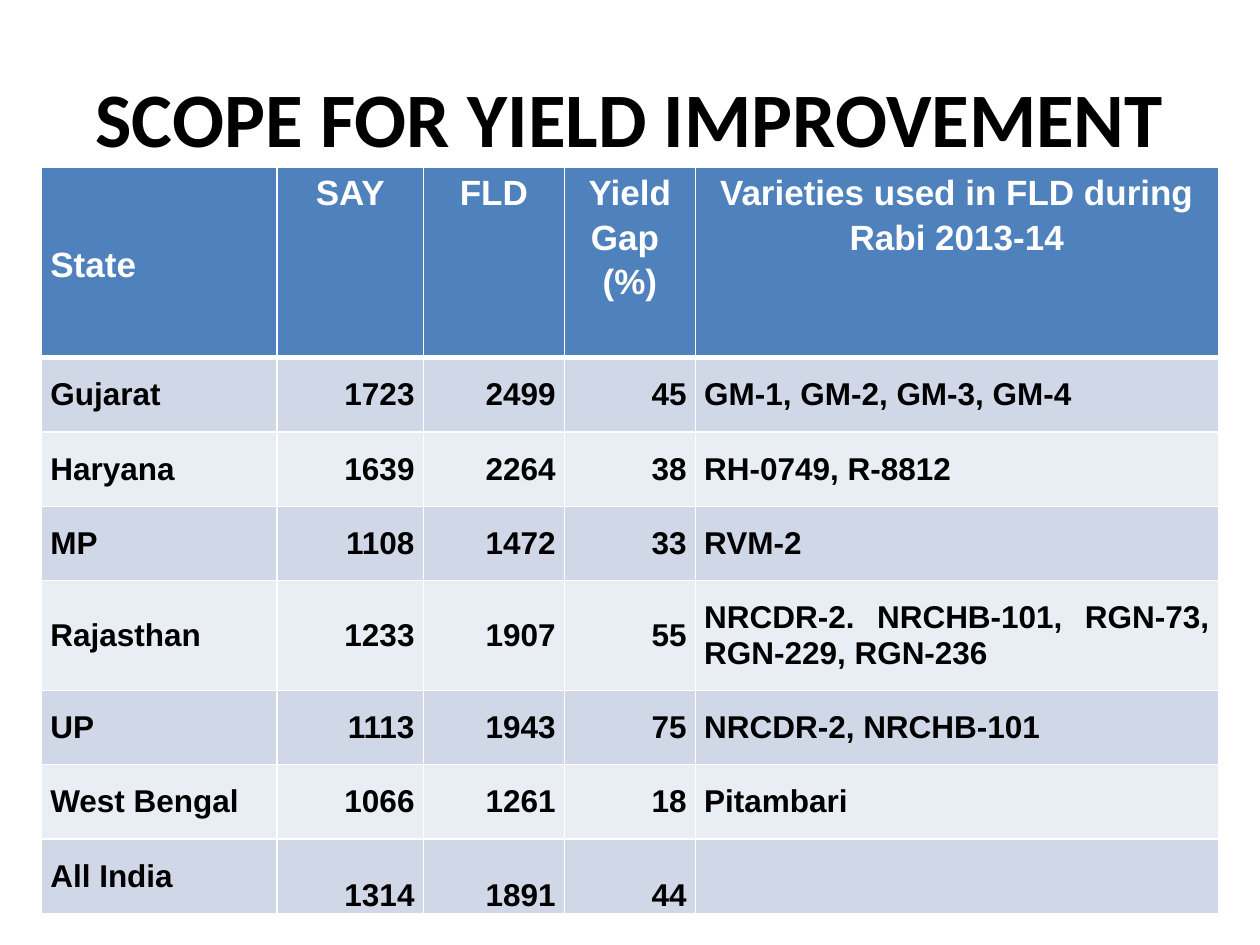
import pptx
import pptx.dml.color
import pptx.enum.text
import pptx.oxml.ns
import pptx.util
from lxml import etree

RGB = pptx.dml.color.RGBColor
WHITE = RGB(0xFF, 0xFF, 0xFF)
BLACK = RGB(0x00, 0x00, 0x00)
BLUE = RGB(0x4F, 0x81, 0xBD)
DARK = RGB(0xD0, 0xD8, 0xE8)
LIGHT = RGB(0xE9, 0xED, 0xF4)

Inches = pptx.util.Inches
Pt = pptx.util.Pt
qn = pptx.oxml.ns.qn
ALIGN = pptx.enum.text.PP_ALIGN
ANCHOR = pptx.enum.text.MSO_ANCHOR

COLS = [1.87, 1.16, 1.12, 1.04, 4.15]
TALL, ROW, HEAD = 0.87, 0.59, 1.51
SIDES = [ALIGN.LEFT, ALIGN.RIGHT, ALIGN.RIGHT, ALIGN.RIGHT, ALIGN.JUSTIFY]
DATA = [
    ["State", "SAY", "FLD", "Yield Gap \n(%)",
     "Varieties used in FLD during Rabi 2013-14"],
    ["Gujarat", "1723", "2499", "45", "GM-1, GM-2, GM-3, GM-4"],
    ["Haryana", "1639", "2264", "38", "RH-0749, R-8812"],
    ["MP", "1108", "1472", "33", "RVM-2"],
    ["Rajasthan", "1233", "1907", "55",
     "NRCDR-2. NRCHB-101, RGN-73, RGN-229, RGN-236"],
    ["UP", "1113", "1943", "75", "NRCDR-2, NRCHB-101"],
    ["West Bengal", "1066", "1261", "18", "Pitambari"],
    ["All India", "1314", "1891", "44", ""],
]
LAST = len(DATA) - 1


def write(para, text, font, size, color):
    run = para.add_run()
    run.text = text
    run.font.name = font
    run.font.size = Pt(size)
    run.font.bold = True
    run.font.color.rgb = color


def border(cell, side, width):
    props = cell._tc.get_or_add_tcPr()
    line = etree.SubElement(props, qn("a:ln" + side), w=str(Pt(width)))
    fill = etree.SubElement(line, qn("a:solidFill"))
    etree.SubElement(fill, qn("a:srgbClr"), val=str(WHITE))


deck = pptx.Presentation()
deck.slide_width, deck.slide_height = Inches(10), Inches(7.5)
slide = deck.slides.add_slide(deck.slide_layouts[6])

# Title
box = slide.shapes.add_textbox(Inches(0.5), Inches(0.3), Inches(9), Inches(1.25))
frame = box.text_frame
frame.word_wrap = True
frame.vertical_anchor = ANCHOR.MIDDLE
frame.paragraphs[0].alignment = ALIGN.CENTER
write(frame.paragraphs[0], "SCOPE FOR YIELD IMPROVEMENT", "Calibri", 44, BLACK)

# Table grid
rows = [HEAD] + [TALL if line[0] == "Rajasthan" else ROW for line in DATA[1:]]
table = slide.shapes.add_table(
    len(rows), len(COLS), Inches(0.33), Inches(1.33),
    Inches(sum(COLS)), Inches(sum(rows))).table
for col, width in zip(table.columns, COLS):
    col.width = Inches(width)
for row, height in zip(table.rows, rows):
    row.height = Inches(height)

# Cells
for r, line in enumerate(DATA):
    head = r == 0
    for c, text in enumerate(line):
        cell = table.cell(r, c)
        cell.margin_left = cell.margin_right = Inches(0.07)
        cell.margin_top = cell.margin_bottom = 0
        if head and c > 0:
            cell.vertical_anchor = ANCHOR.TOP
        elif r == LAST and c > 0:
            cell.vertical_anchor = ANCHOR.BOTTOM
        else:
            cell.vertical_anchor = ANCHOR.MIDDLE

        # The rule under the header is thicker than the rest
        border(cell, "L", 1)
        border(cell, "R", 1)
        border(cell, "T", 3 if r == 1 else 1)
        border(cell, "B", 3 if head else 1)
        cell.fill.solid()
        cell.fill.fore_color.rgb = BLUE if head else DARK if r % 2 else LIGHT

        if not text:
            continue
        parts = text.split("\n")
        for i, part in enumerate(parts):
            body = cell.text_frame
            para = body.add_paragraph() if i else body.paragraphs[0]
            para.alignment = ALIGN.CENTER if head and c > 0 else SIDES[c]
            if head:
                para.line_spacing = 1.15
            if len(parts) > 1:
                para._p.get_or_add_pPr().set("indent", str(Inches(-0.07)))
            write(para, part, "Arial", 20 if head else 18,
                  WHITE if head else BLACK)

deck.save("out.pptx")
